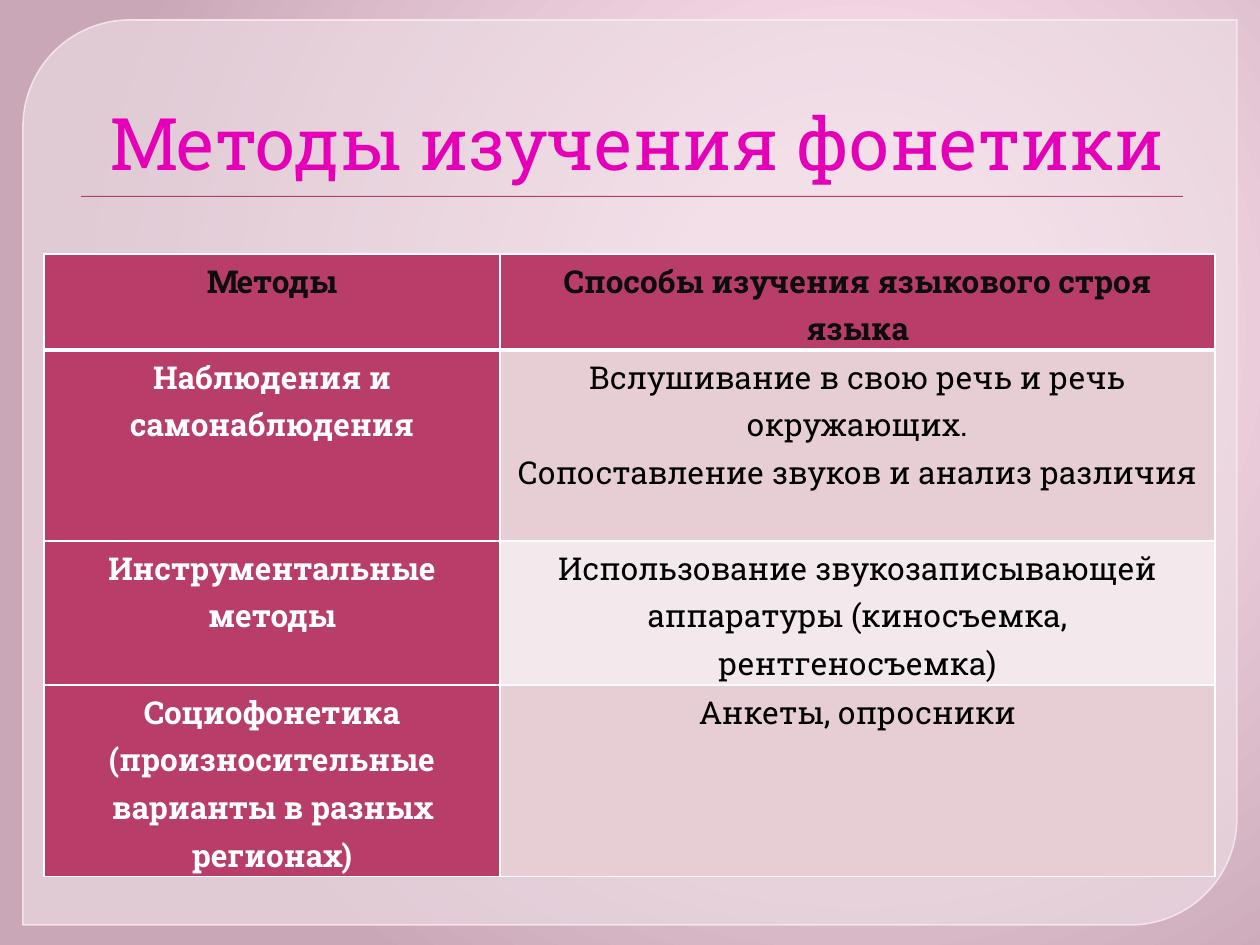
from lxml.etree import SubElement
from pptx import Presentation
from pptx.dml.color import RGBColor
from pptx.enum.shapes import MSO_SHAPE
from pptx.enum.text import MSO_ANCHOR, MSO_AUTO_SIZE, PP_ALIGN
from pptx.oxml import parse_xml
from pptx.oxml.ns import nsdecls, qn
from pptx.util import Pt

PX = 914400 // 126
FONT = "Roboto Slab"
COLORS = {
    "glow": "FFE5F1", "blush": "FFE3F0", "edge": "C9A7B7",
    "panel": "EDDEE5", "panel_line": "FAE9F1", "title": "E500B7",
    "accent": "B83D68", "band": "E6CED4", "light": "F3E8EB",
    "heading": "0D0D0D", "white": "FFFFFF", "black": "000000",
}
COLUMNS = (456, 715)
ROWS = (96, 191, 144, 191)
HEADER = ("Методы", "Способы изучения языкового строя языка")
METHODS = (
    ("Наблюдения и самонаблюдения",
     "Вслушивание в свою речь и речь окружающих.\nСопоставление звуков и анализ различия"),
    ("Инструментальные методы",
     "Использование звукозаписывающей аппаратуры (киносъемка, рентгеносъемка)"),
    ("Социофонетика (произносительные варианты в разных регионах)",
     "Анкеты, опросники"),
)


def rgb(name):
    """Return the named colour."""
    return RGBColor.from_string(COLORS[name])


def scale(*lengths):
    """Turn px lengths into EMU."""
    return [n * PX for n in lengths]


def set_alpha(color_format, percent):
    """Make a solid fill or line colour translucent."""
    color = color_format._xPr.find(".//" + qn("a:srgbClr"))
    SubElement(color, qn("a:alpha"), val=str(percent * 1000))


def add_background(s):
    """Paint the slide with a radial gradient."""
    stops = "".join(
        f'<a:gs pos="{pos * 1000}"><a:srgbClr val="{COLORS[name]}"/></a:gs>'
        for pos, name in ((0, "glow"), (20, "blush"), (100, "edge")))
    bg = parse_xml(
        f'<p:bg {nsdecls("p", "a")}><p:bgPr><a:gradFill rotWithShape="1">'
        f'<a:gsLst>{stops}</a:gsLst><a:path path="circle">'
        '<a:fillToRect l="68000" t="35000" r="32000" b="65000"/></a:path>'
        '</a:gradFill><a:effectLst/></p:bgPr></p:bg>')
    s._element.cSld.insert(0, bg)


def add_panel(s, x, y, w, h):
    """Add the translucent panel and its rule behind the title."""
    panel = s.shapes.add_shape(MSO_SHAPE.ROUND_2_DIAG_RECTANGLE, *scale(x, y, w, h))
    panel.adjustments[0] = 0.118
    panel.adjustments[1] = 0
    panel.fill.solid()
    panel.fill.fore_color.rgb = rgb("panel")
    set_alpha(panel.fill, 65)
    panel.line.color.rgb = rgb("panel_line")
    panel.line.width = Pt(0.87)
    set_alpha(panel.line.fill, 88)
    rule = s.shapes.add_shape(MSO_SHAPE.RECTANGLE, *scale(x + 58, y + 176, w - 112, 1))
    rule.fill.solid()
    rule.fill.fore_color.rgb = rgb("accent")
    rule.line.fill.background()
    for i, sp in enumerate((panel, rule)):
        sp.shadow.inherit = False
        s.shapes._spTree.insert(2 + i, sp._element)


def add_title(s, x, y, w, h):
    """Place the right-aligned title."""
    sp = s.shapes.title
    sp.left, sp.top, sp.width, sp.height = scale(x, y, w, h)
    tf = sp.text_frame
    tf.text = "Методы изучения фонетики"
    tf.auto_size = MSO_AUTO_SIZE.NONE
    tf.word_wrap = True
    tf.vertical_anchor = MSO_ANCHOR.BOTTOM
    tf.margin_left, tf.margin_top, tf.margin_right, tf.margin_bottom = scale(0, 0, 33, 87)
    p = tf.paragraphs[0]
    p.alignment = PP_ALIGN.RIGHT
    font = p.runs[0].font
    font.name, font.size = FONT, Pt(41.4)
    font.color.rgb = rgb("title")


def set_borders(cell, bottom, top):
    """Draw white cell borders with the given bottom and top widths."""
    tc_pr = cell._tc.get_or_add_tcPr()
    for i, (side, width) in enumerate((("L", 1), ("R", 1), ("T", top), ("B", bottom))):
        tc_pr.insert(i, parse_xml(
            f'<a:ln{side} {nsdecls("a")} w="{Pt(width)}"><a:solidFill>'
            f'<a:srgbClr val="{COLORS["white"]}"/></a:solidFill></a:ln{side}>'))


def fill_cell(cell, text, fill, color, bold):
    """Set the text, fill and font of one cell."""
    cell.margin_left = cell.margin_right = 9 * PX
    cell.margin_top = cell.margin_bottom = 0
    cell.fill.solid()
    cell.fill.fore_color.rgb = rgb(fill)
    cell.text_frame.text = text
    for p in cell.text_frame.paragraphs:
        p.alignment = PP_ALIGN.CENTER
        p.line_spacing = 1.15
        for r in p.runs:
            r.font.name, r.font.size, r.font.bold = FONT, Pt(18), bold
            r.font.color.rgb = rgb(color)


def add_methods(s, x, y):
    """Add the table of methods."""
    frame = s.shapes.add_table(len(ROWS), len(COLUMNS),
                               *scale(x, y, sum(COLUMNS), sum(ROWS)))
    table = frame.table
    for column, width in zip(table.columns, COLUMNS):
        column.width = width * PX
    for row, height in zip(table.rows, ROWS):
        row.height = height * PX
    for i, texts in enumerate((HEADER, *METHODS)):
        for j, text in enumerate(texts):
            cell = table.cell(i, j)
            if i == 0:
                style = ("accent", "heading", True)
            elif j == 0:
                style = ("accent", "white", True)
            else:
                style = ("band" if i % 2 else "light", "black", False)
            fill_cell(cell, text, *style)
            set_borders(cell, bottom=3 if i == 0 else 1, top=3 if i == 1 else 1)


def main():
    """Build and save the slide."""
    prs = Presentation()
    prs.slide_width, prs.slide_height = scale(1260, 945)
    s = prs.slides.add_slide(prs.slide_layouts[5])
    add_background(s)
    add_panel(s, 23, 20, 1214, 905)
    add_title(s, 63, 145, 1134, 127)
    add_methods(s, 44, 254)
    prs.save("out.pptx")


if __name__ == "__main__":
    main()
